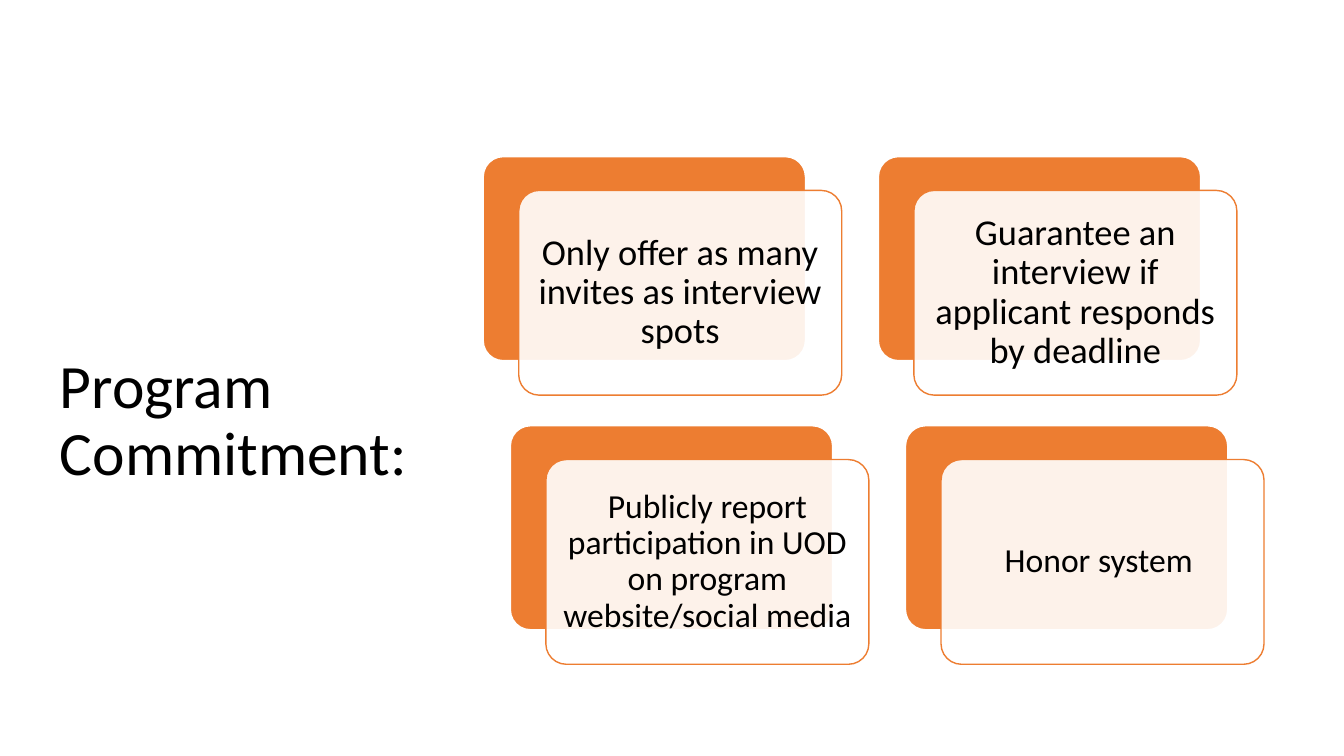
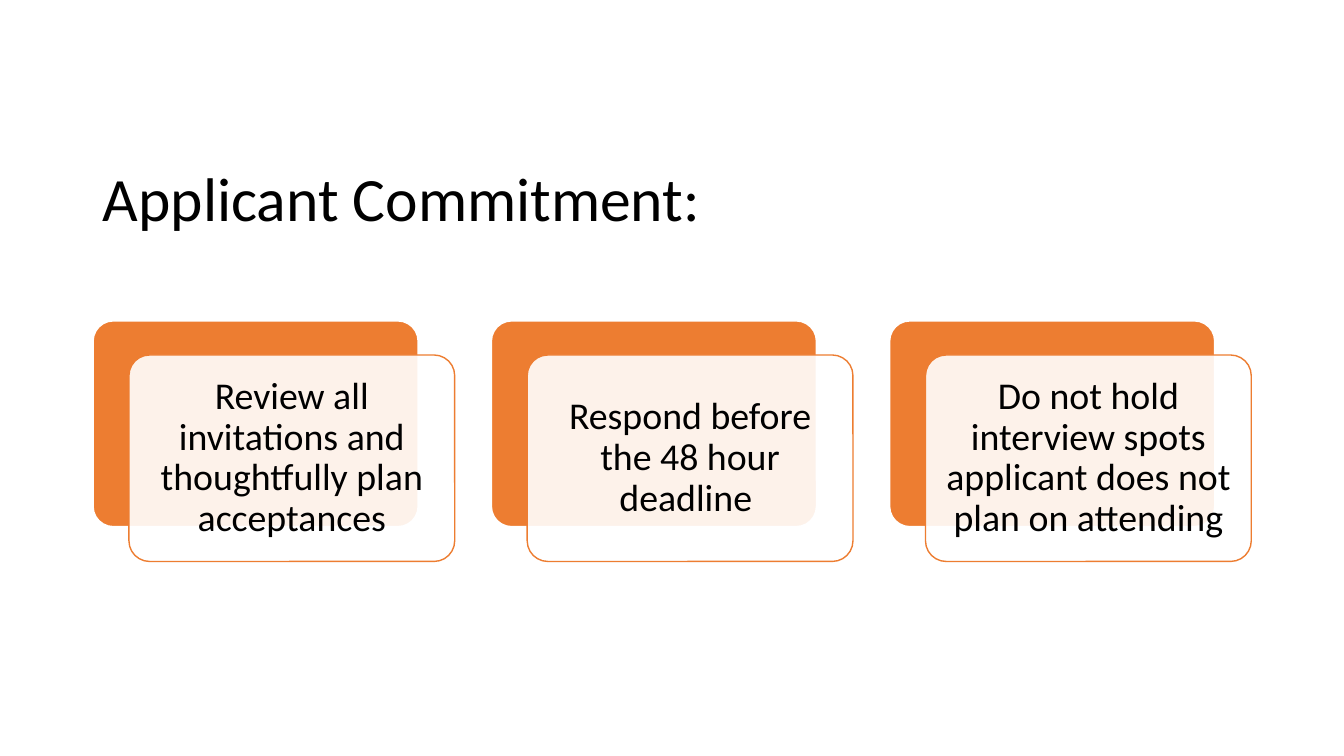
import pptx
import pptx.dml.color
import pptx.enum.shapes
import pptx.enum.text
import pptx.oxml
import pptx.oxml.ns
import pptx.util

RGB = pptx.dml.color.RGBColor
ORANGE = RGB(0xED, 0x7D, 0x31)
WHITE = RGB(0xFF, 0xFF, 0xFF)
BLACK = RGB(0, 0, 0)
FONT = "Calibri"
ALIGN = pptx.enum.text.PP_ALIGN
MIDDLE = pptx.enum.text.MSO_ANCHOR.MIDDLE
ROUND = pptx.enum.shapes.MSO_SHAPE.ROUNDED_RECTANGLE

WIDTH = pptx.util.Inches(13.33)
HEIGHT = pptx.util.Inches(7.5)
COL = WIDTH / 100
ROW = HEIGHT / 100
GAP = 2.7
SHARE_W, SHARE_H = 0.9, 0.857
SIDES = ("left", "top", "width", "height")
MARGINS = ("margin_left", "margin_top", "margin_right", "margin_bottom")


def apply(target, values):
    for name, value in values.items():
        setattr(target, name, value)


def scale(box):
    return [round(n * unit) for n, unit in zip(box, (COL, ROW, COL, ROW))]


def write(shape, text, size, align, inset):
    frame = shape.text_frame
    frame.text = text
    apply(frame, {"word_wrap": True, "vertical_anchor": MIDDLE,
                  "auto_size": pptx.enum.text.MSO_AUTO_SIZE.NONE})
    apply(frame, dict.fromkeys(MARGINS, pptx.util.Inches(inset)))
    line = frame.paragraphs[0]
    apply(line, {"alignment": align, "line_spacing": 0.9})
    apply(line.font, {"name": FONT, "size": pptx.util.Pt(size)})
    line.font.color.rgb = BLACK


def panel(group, box, fill, edge, weight, alpha=None):
    shape = group.shapes.add_shape(ROUND, *scale(box))
    shape.adjustments[0] = 0.1
    shape.shadow.inherit = False
    shape.fill.solid()
    shape.fill.fore_color.rgb = fill
    shape.line.color.rgb = edge
    shape.line.width = pptx.util.Pt(weight)
    if alpha:
        color = shape.fill._xPr.find(".//" + pptx.oxml.ns.qn("a:srgbClr"))
        color.append(pptx.oxml.parse_xml(
            f'<a:alpha {pptx.oxml.ns.nsdecls("a")} val="{alpha * 1000}"/>'))
    return shape


def card(group, box, text, size):
    x, y, w, h = box
    wide, high = w * SHARE_W, h * SHARE_H
    panel(group, (x, y, wide, high), ORANGE, WHITE, 1.5)
    front = panel(group, (x + w - wide, y + h - high, wide, high),
                  WHITE, ORANGE, 1, 90)
    write(front, text, size, ALIGN.CENTER, 0.11 if size > 24 else 0.1)


def cards(slide, box, texts, size):
    x, y, w, h = box
    wide = (w - GAP * (len(texts) - 1)) / len(texts)
    group = slide.shapes.add_group_shape()
    for i, text in enumerate(texts):
        card(group, (x + i * (wide + GAP), y, wide, h), text, size)


def page(deck, title, box, rows):
    slide = deck.slides.add_slide(deck.slide_layouts[5])
    head = slide.shapes.title
    apply(head, dict(zip(SIDES, scale(box))))
    write(head, title, 44, ALIGN.LEFT, 0.1)
    for row in rows:
        cards(slide, *row)


def main():
    deck = pptx.Presentation()
    apply(deck, {"slide_width": WIDTH, "slide_height": HEIGHT})
    page(deck, "Program Commitment:", (3.7, 15.3, 28.6, 81), [
        ((35.93, 20.67, 56.1, 31.6),
         ["Only offer as many invites as interview spots",
          "Guarantee an interview if applicant responds by deadline"], 26),
        ((37.95, 56.27, 56.1, 31.6),
         ["Publicly report participation in UOD on program "
          "website/social media",
          "Honor system "], 24),
    ])
    page(deck, "Applicant Commitment:", (6.9, 21.5, 86.3, 10.3), [
        ((6.9, 42.4, 86.2, 31.87),
         ["Review all invitations and thoughtfully plan acceptances",
          "Respond before the 48 hour deadline ",
          "Do not hold interview spots applicant does not plan on attending"],
         27),
    ])
    deck.save("out.pptx")


if __name__ == "__main__":
    main()
